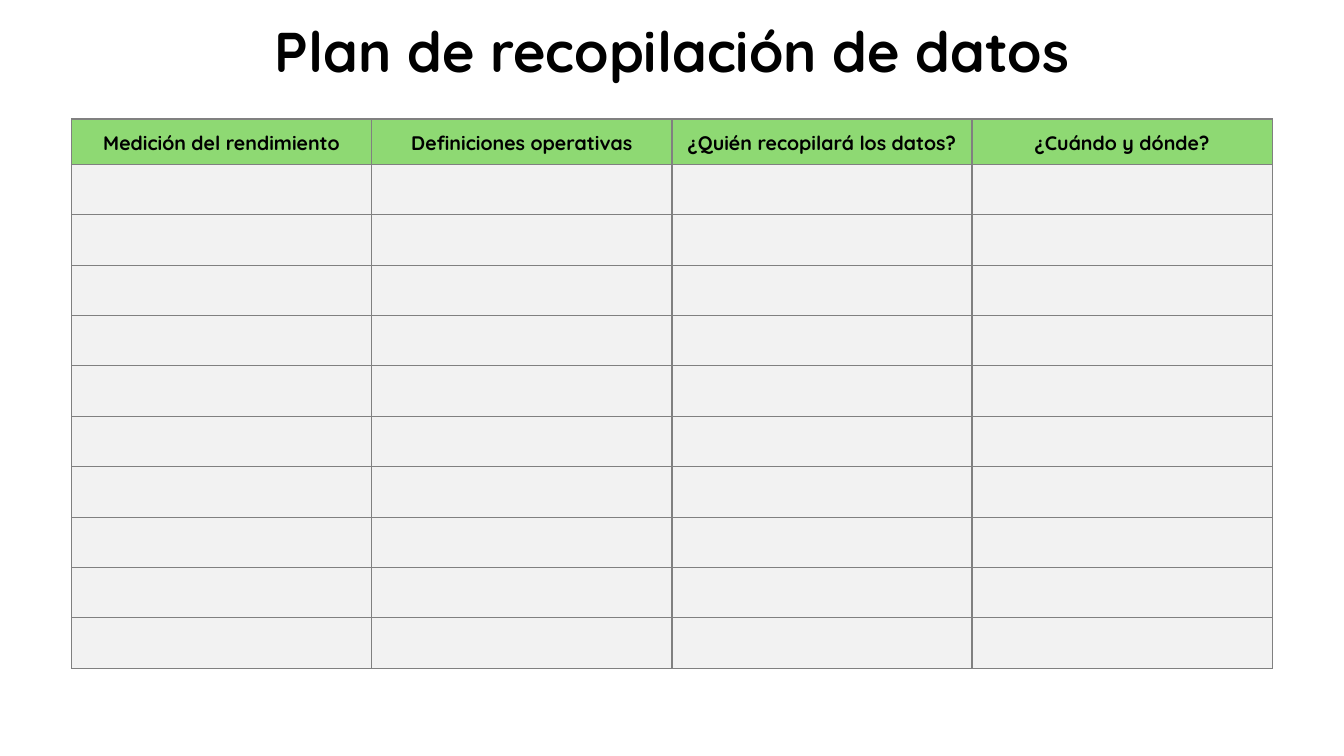
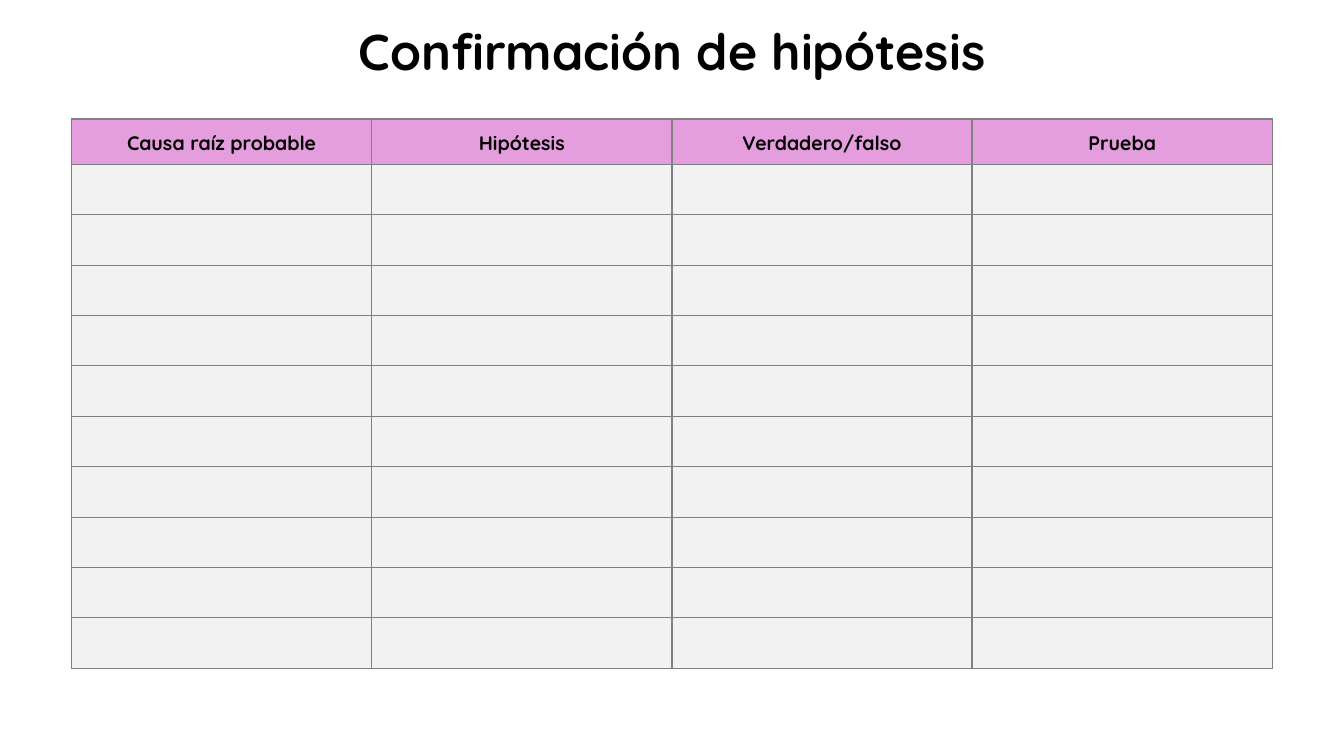
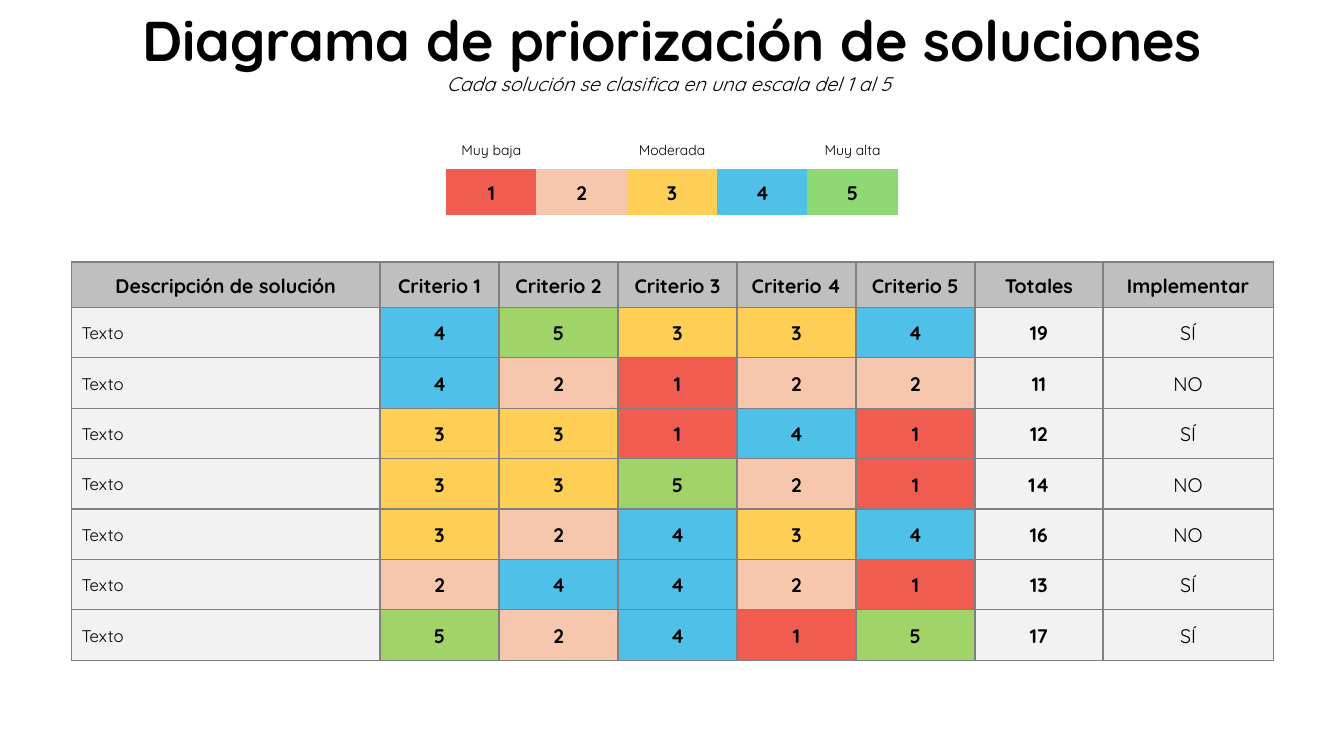
from dataclasses import dataclass, field
from typing import Sequence

from lxml.etree import SubElement
from pptx import Presentation
from pptx.dml.color import RGBColor
from pptx.enum.text import MSO_ANCHOR, PP_ALIGN
from pptx.oxml.ns import qn
from pptx.slide import Slide
from pptx.table import _Cell as Cell
from pptx.util import Inches, Pt

# Shared page geometry, in inches
SLIDE_WIDTH, SLIDE_HEIGHT = 13.33, 7.5
MARGIN = 0.71
TABLE_WIDTH = SLIDE_WIDTH - 2 * MARGIN
TITLE_HEIGHT = 1.08
HEADER_HEIGHT, ROW_HEIGHT = 0.39, 0.5
TABLE_TOP = 1.18

# Shared look
FONT = "Quicksand"
BLACK, GRID_GRAY, HEADER_GRAY, BODY_GRAY = "000000", "808080", "BFBFBF", "F2F2F2"
GREEN, PINK = "8ED973", "E59EDD"
LEGEND_COLORS = {1: "F05C4F", 2: "F6C6AD", 3: "FFCE54", 4: "4FC1E8", 5: GREEN}
SCORE_COLORS = LEGEND_COLORS | {5: "A0D468"}
PLAIN_TABLE_STYLE = "{2D5ABB26-0587-4C30-8999-92F81FD0307C}"

STRONG = {"size": Pt(14), "bold": True}
REGULAR = {"size": Pt(14), "bold": False}
NOTE = {"size": Pt(12), "bold": False}
CAPTION = {"size": Pt(10), "bold": False}
SUBTITLE = {"size": Pt(14), "bold": False, "italic": True}


@dataclass(frozen=True)
class CellContent:
    text: str = ""
    fill: str | None = BODY_GRAY
    style: dict = field(default_factory=lambda: STRONG)
    align: PP_ALIGN = PP_ALIGN.CENTER


@dataclass(frozen=True)
class TableBox:
    left: float
    top: float
    column_widths: Sequence[float]
    row_heights: Sequence[float]
    bordered: bool = True
    side_margin: float = 0.1


@dataclass(frozen=True)
class BlankForm:
    title: str
    title_size: int
    header_fill: str
    headers: Sequence[str]
    empty_rows: int = 10


@dataclass(frozen=True)
class Solution:
    scores: Sequence[int]
    decision: str


FORMS = [
    BlankForm("Plan de recopilación de datos", 40, GREEN,
              ["Medición del rendimiento", "Definiciones operativas",
               "¿Quién recopilará los datos?", "¿Cuándo y dónde?"]),
    BlankForm("Confirmación de hipótesis", 36, PINK,
              ["Causa raíz probable", "Hipótesis", "Verdadero/falso", "Prueba"]),
]
SOLUTIONS = [
    Solution([4, 5, 3, 3, 4], "SÍ"),
    Solution([4, 2, 1, 2, 2], "NO"),
    Solution([3, 3, 1, 4, 1], "SÍ"),
    Solution([3, 3, 5, 2, 1], "NO"),
    Solution([3, 2, 4, 3, 4], "NO"),
    Solution([2, 4, 4, 2, 1], "SÍ"),
    Solution([5, 2, 4, 1, 5], "SÍ"),
]
LEGEND_CAPTIONS = ["Muy baja", "", "Moderada", "", "Muy alta"]


def color(hex_value: str) -> RGBColor:
    return RGBColor.from_string(hex_value)


def add_run(paragraph, text: str, style: dict) -> None:
    run = paragraph.add_run()
    run.text = text
    for name, value in ({"name": FONT} | style).items():
        setattr(run.font, name, value)
    run.font.color.rgb = color(BLACK)


def add_title(slide: Slide, title: str, size: int, subtitle: str = "") -> None:
    box = slide.shapes.add_textbox(
        Inches(MARGIN), 0, Inches(TABLE_WIDTH), Inches(TITLE_HEIGHT))
    frame = box.text_frame
    frame.word_wrap = True
    frame.vertical_anchor = MSO_ANCHOR.MIDDLE
    paragraph = frame.paragraphs[0]
    paragraph.alignment = PP_ALIGN.CENTER
    paragraph.line_spacing = 0.9
    add_run(paragraph, title, {"size": Pt(size), "bold": True})
    if subtitle:
        paragraph.add_line_break()
        add_run(paragraph, subtitle, SUBTITLE)


def add_borders(cell: Cell) -> None:
    properties = cell._tc.get_or_add_tcPr()
    for side in ("lnL", "lnR", "lnT", "lnB"):
        line = SubElement(properties, qn(f"a:{side}"), w=str(Pt(1)))
        SubElement(SubElement(line, qn("a:solidFill")), qn("a:srgbClr"), val=GRID_GRAY)


def fill_cell(cell: Cell, content: CellContent, box: TableBox) -> None:
    if box.bordered:
        add_borders(cell)
    if content.fill:
        cell.fill.solid()
        cell.fill.fore_color.rgb = color(content.fill)
    else:
        cell.fill.background()
    cell.vertical_anchor = MSO_ANCHOR.MIDDLE
    cell.margin_left = cell.margin_right = Inches(box.side_margin)
    cell.margin_top = cell.margin_bottom = Inches(0.1 if content.text else 0)
    if content.text:
        paragraph = cell.text_frame.paragraphs[0]
        paragraph.alignment = content.align
        paragraph.line_spacing = 1.07
        add_run(paragraph, content.text, content.style)


def add_grid(slide: Slide, box: TableBox, rows: Sequence[Sequence[CellContent]]) -> None:
    table = slide.shapes.add_table(
        len(rows), len(box.column_widths), Inches(box.left), Inches(box.top),
        Inches(sum(box.column_widths)), Inches(sum(box.row_heights))).table
    table._tbl.tblPr.find(qn("a:tableStyleId")).text = PLAIN_TABLE_STYLE
    table.horz_banding = False
    for column, width in zip(table.columns, box.column_widths):
        column.width = Inches(width)
    for row, height, contents in zip(table.rows, box.row_heights, rows):
        row.height = Inches(height)
        for cell, content in zip(row.cells, contents):
            fill_cell(cell, content, box)


def body_heights(row_count: int) -> list[float]:
    return [HEADER_HEIGHT] + [ROW_HEIGHT] * row_count


def draw_form(slide: Slide, form: BlankForm) -> None:
    add_title(slide, form.title, form.title_size)
    count = len(form.headers)
    box = TableBox(MARGIN, TABLE_TOP, [TABLE_WIDTH / count] * count,
                   body_heights(form.empty_rows))
    header = [CellContent(text, form.header_fill) for text in form.headers]
    add_grid(slide, box, [header] + [[CellContent()] * count] * form.empty_rows)


def solution_row(solution: Solution) -> list[CellContent]:
    return [
        CellContent("Texto", style=NOTE, align=PP_ALIGN.LEFT),
        *[CellContent(str(score), SCORE_COLORS[score]) for score in solution.scores],
        CellContent(str(sum(solution.scores))),
        CellContent(solution.decision, style=REGULAR),
    ]


def draw_prioritization(slide: Slide) -> None:
    add_title(slide, "Diagrama de priorización de soluciones", 40,
              "Cada solución se clasifica en una escala del 1 al 5 ")

    # Scored solutions
    headers = ["Descripción de solución", *[f"Criterio {n}" for n in range(1, 6)],
               "Totales", "Implementar"]
    box = TableBox(MARGIN, 2.6, [3.06] + [1.18] * 5 + [1.27, 1.69],
                   body_heights(len(SOLUTIONS)))
    add_grid(slide, box, [[CellContent(text, HEADER_GRAY) for text in headers],
                          *map(solution_row, SOLUTIONS)])

    # Rating scale, centred above the table
    width = 4.48
    legend = TableBox((SLIDE_WIDTH - width) / 2, 1.29, [width / 5] * 5,
                      [HEADER_HEIGHT] * 2, bordered=False, side_margin=0.08)
    add_grid(slide, legend, [
        [CellContent(text, None, CAPTION) for text in LEGEND_CAPTIONS],
        [CellContent(str(score), fill) for score, fill in LEGEND_COLORS.items()],
    ])


def main() -> None:
    presentation = Presentation()
    presentation.slide_width = Inches(SLIDE_WIDTH)
    presentation.slide_height = Inches(SLIDE_HEIGHT)
    blank = presentation.slide_layouts[6]
    for form in FORMS:
        draw_form(presentation.slides.add_slide(blank), form)
    draw_prioritization(presentation.slides.add_slide(blank))
    presentation.save("out.pptx")


if __name__ == "__main__":
    main()
